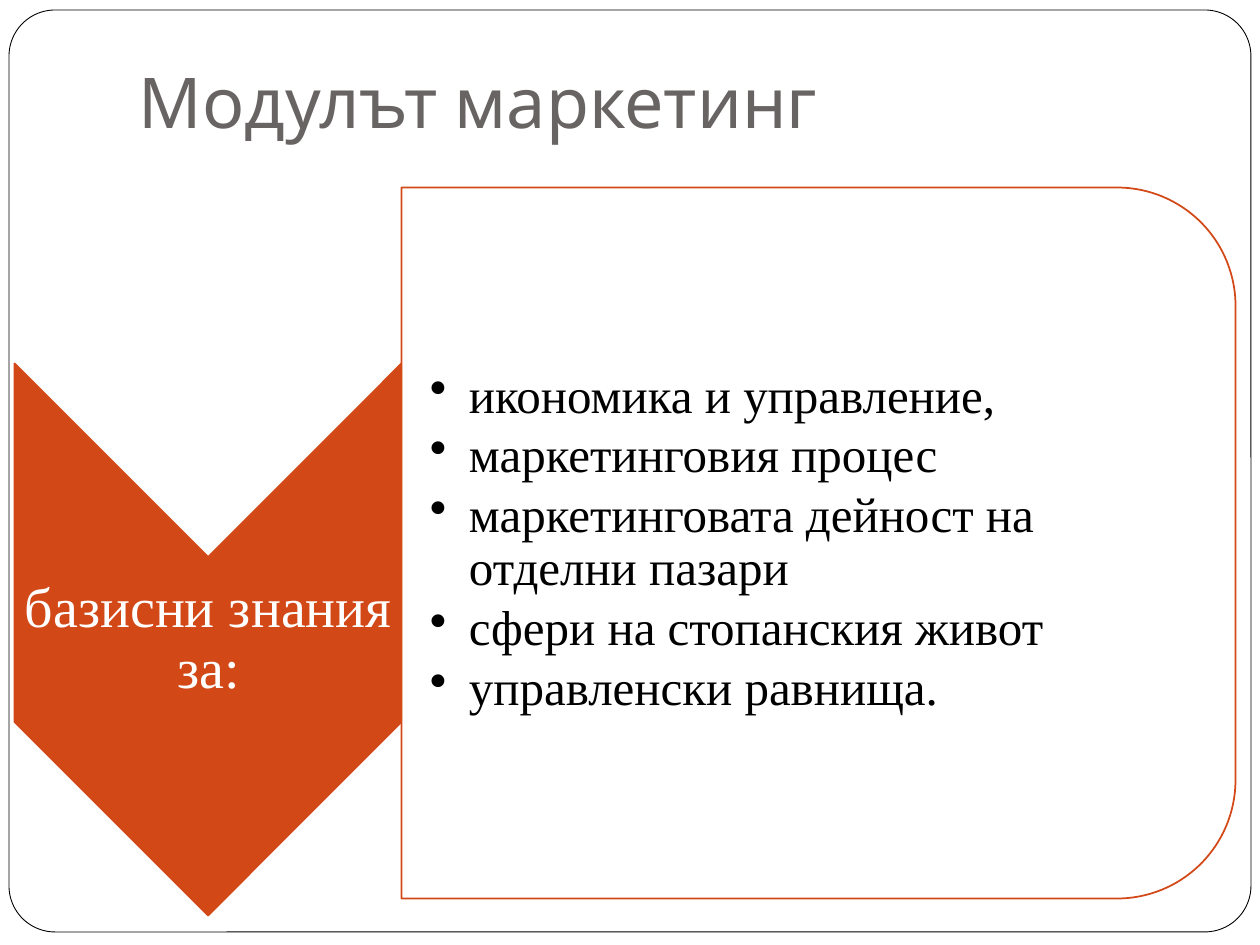
from lxml.etree import SubElement
from pptx import Presentation
from pptx.dml.color import RGBColor
from pptx.enum.shapes import MSO_SHAPE
from pptx.enum.text import MSO_ANCHOR, PP_ALIGN
from pptx.oxml.ns import qn
from pptx.util import Emu, Pt

PIXELS_PER_INCH = 126
ORANGE = "D34817"
WHITE = "FFFFFF"
BODY_FONT = "Times New Roman"
TOPICS = [
    "икономика и управление,",
    "маркетинговия процес",
    "маркетинговата дейност на отделни пазари",
    "сфери на стопанския живот",
    "управленски равнища.",
]


def px(length):
    """Turn whole pixels into EMU."""
    return Emu(round(length * 914400 / PIXELS_PER_INCH))


def color(value):
    """Turn a hex string into a colour."""
    return RGBColor.from_string(value)


def add_panel(slide, preset, frame, fill, line, width, rotation=0):
    """Add a filled and outlined preset shape."""
    shape = slide.shapes.add_shape(preset, *map(px, frame))
    shape.shadow.inherit = False
    shape.rotation = rotation
    shape.fill.solid()
    shape.fill.fore_color.rgb = color(fill)
    shape.line.color.rgb = color(line)
    shape.line.width = Pt(width)
    return shape


def set_opacity(shape, percent):
    """Make the solid fill of a shape partly transparent."""
    fill_color = shape.fill._xPr.find(qn("a:solidFill"))[0]
    SubElement(fill_color, qn("a:alpha"), val=str(percent * 1000))


def add_text(slide, frame, lines, font, size, hex_color, anchor, margins):
    """Add a wrapping text box with one paragraph for each line."""
    box = slide.shapes.add_textbox(*map(px, frame))
    text_frame = box.text_frame
    text_frame.word_wrap = True
    text_frame.vertical_anchor = anchor
    (text_frame.margin_left, text_frame.margin_top,
     text_frame.margin_right, text_frame.margin_bottom) = map(px, margins)
    text_frame.text = "\n".join(lines)
    for para in text_frame.paragraphs:
        for span in para.runs:
            span.font.name = font
            span.font.size = Pt(size)
            span.font.color.rgb = color(hex_color)
    return text_frame.paragraphs


def add_bullet(para, indent):
    """Give a paragraph a round bullet with a hanging indent."""
    properties = para._p.get_or_add_pPr()
    properties.set("marL", str(px(indent)))
    properties.set("indent", str(-px(indent)))
    SubElement(properties, qn("a:buChar"), char="•")


def main():
    """Build the slide and save it."""
    deck = Presentation()
    deck.slide_width, deck.slide_height = px(1260), px(945)
    slide = deck.slides.add_slide(deck.slide_layouts[6])

    border = add_panel(slide, MSO_SHAPE.ROUNDED_RECTANGLE,
                       (9, 10, 1242, 922), WHITE, "000000", 0.5)
    border.adjustments[0] = 0.05
    add_text(slide, (126, 38, 1071, 117), ["Модулът маркетинг"], "Karla", 40,
             "696464", MSO_ANCHOR.BOTTOM, (13, 6, 13, 13))

    add_panel(slide, MSO_SHAPE.CHEVRON, (-68, 446, 552, 387),
              ORANGE, ORANGE, 1, rotation=90)
    heading, = add_text(slide, (15, 557, 387, 166), ["базисни знания за:"],
                        BODY_FONT, 32, WHITE, MSO_ANCHOR.MIDDLE, (3, 3, 3, 3))
    heading.alignment = PP_ALIGN.CENTER
    heading.line_spacing = 0.9

    panel = add_panel(slide, MSO_SHAPE.ROUND_2_SAME_RECTANGLE,
                      (463, 126, 711, 834), WHITE, ORANGE, 1, rotation=90)
    set_opacity(panel, 90)
    topics = add_text(slide, (402, 223, 799, 641), TOPICS, BODY_FONT, 28,
                      "000000", MSO_ANCHOR.MIDDLE, (28, 3, 3, 3))
    for para in topics:
        para.line_spacing = 0.9
        para.space_after = Pt(4)
        add_bullet(para, 39)

    deck.save("out.pptx")


if __name__ == "__main__":
    main()
